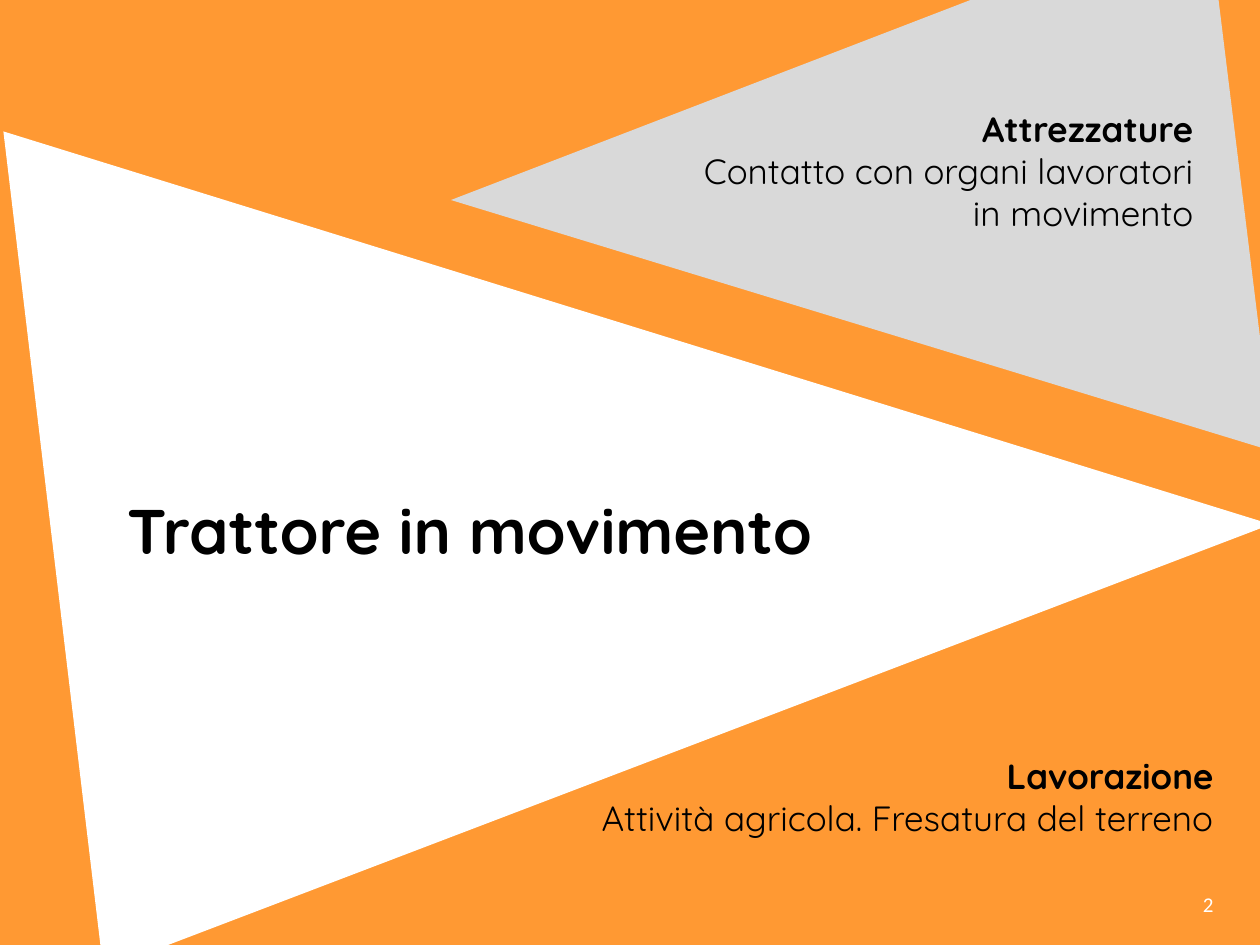
import pptx
import pptx.dml.color
import pptx.enum.shapes
import pptx.enum.text
import pptx.util

THEME = {
    "orange": "FF9933", "white": "FFFFFF", "grey": "D9D9D9", "black": "000000",
    "heading_font": "Quicksand", "number_font": "Calibri",
    "title_size": 36, "body_size": 20, "number_size": 12,
}
SHAPES = pptx.enum.shapes.MSO_SHAPE
ALIGN = pptx.enum.text.PP_ALIGN

presentation = pptx.Presentation()
presentation.slide_width = pptx.util.Inches(10)
presentation.slide_height = pptx.util.Inches(7.5)
slide = presentation.slides.add_slide(presentation.slide_layouts[5])

# Grid of 100 columns by 75 rows
COLUMN = presentation.slide_width / 100
ROW = presentation.slide_height / 75


def grid(left, top, width, height):
    return [round(left * COLUMN), round(top * ROW), round(width * COLUMN), round(height * ROW)]


def write(shape, lines, *, size, font=THEME["heading_font"], color=THEME["black"],
          align=ALIGN.RIGHT, bold_first=True):
    frame = shape.text_frame
    frame.word_wrap = True
    frame.auto_size = pptx.enum.text.MSO_AUTO_SIZE.NONE
    frame.vertical_anchor = pptx.enum.text.MSO_ANCHOR.TOP
    frame.text = "\n".join(lines)
    for index, paragraph in enumerate(frame.paragraphs):
        paragraph.alignment = align
        paragraph.font.name = font
        paragraph.font.size = pptx.util.Pt(size)
        paragraph.font.bold = bold_first and index == 0
        paragraph.font.color.rgb = pptx.dml.color.RGBColor.from_string(color)


# Orange backdrop and the two tilted triangles
for kind, place, rotation, color in [
    (SHAPES.RECTANGLE, (0, 0, 101.2, 79.5), 0, "orange"),
    (SHAPES.ISOSCELES_TRIANGLE, (18.5, -10.1, 67, 96.2), 83.2, "white"),
    (SHAPES.ISOSCELES_TRIANGLE, (45.8, -13.1, 43.4, 62.4), 263, "grey"),
]:
    shape = slide.shapes.add_shape(kind, *grid(*place))
    shape.rotation = rotation
    if kind == SHAPES.ISOSCELES_TRIANGLE:
        shape.adjustments[0] = 0.64
    shape.fill.solid()
    shape.fill.fore_color.rgb = pptx.dml.color.RGBColor.from_string(THEME[color])
    shape.line.fill.background()
    shape.shadow.inherit = False

# Title, brought in front of the triangles
title = slide.shapes.title
title.left, title.top, title.width, title.height = grid(9.1, 38.5, 58.8, 7.1)
title.element.getparent().append(title.element)
write(title, ["Trattore in movimento"], size=THEME["title_size"], align=ALIGN.LEFT)

# Captions: bold heading over its description
for place, lines in [
    ((52, 8, 43.7, 11.1), ["Attrezzature", "Contatto con organi lavoratori in movimento"]),
    ((42.1, 59.4, 55.2, 7.7), ["Lavorazione", "Attività agricola. Fresatura del terreno"]),
]:
    write(slide.shapes.add_textbox(*grid(*place)), lines, size=THEME["body_size"])

# Page number
write(slide.shapes.add_textbox(*grid(91.7, 70.3, 5.6, 4.2)), ["2"], size=THEME["number_size"],
      font=THEME["number_font"], color=THEME["white"], bold_first=False)

presentation.save("out.pptx")
